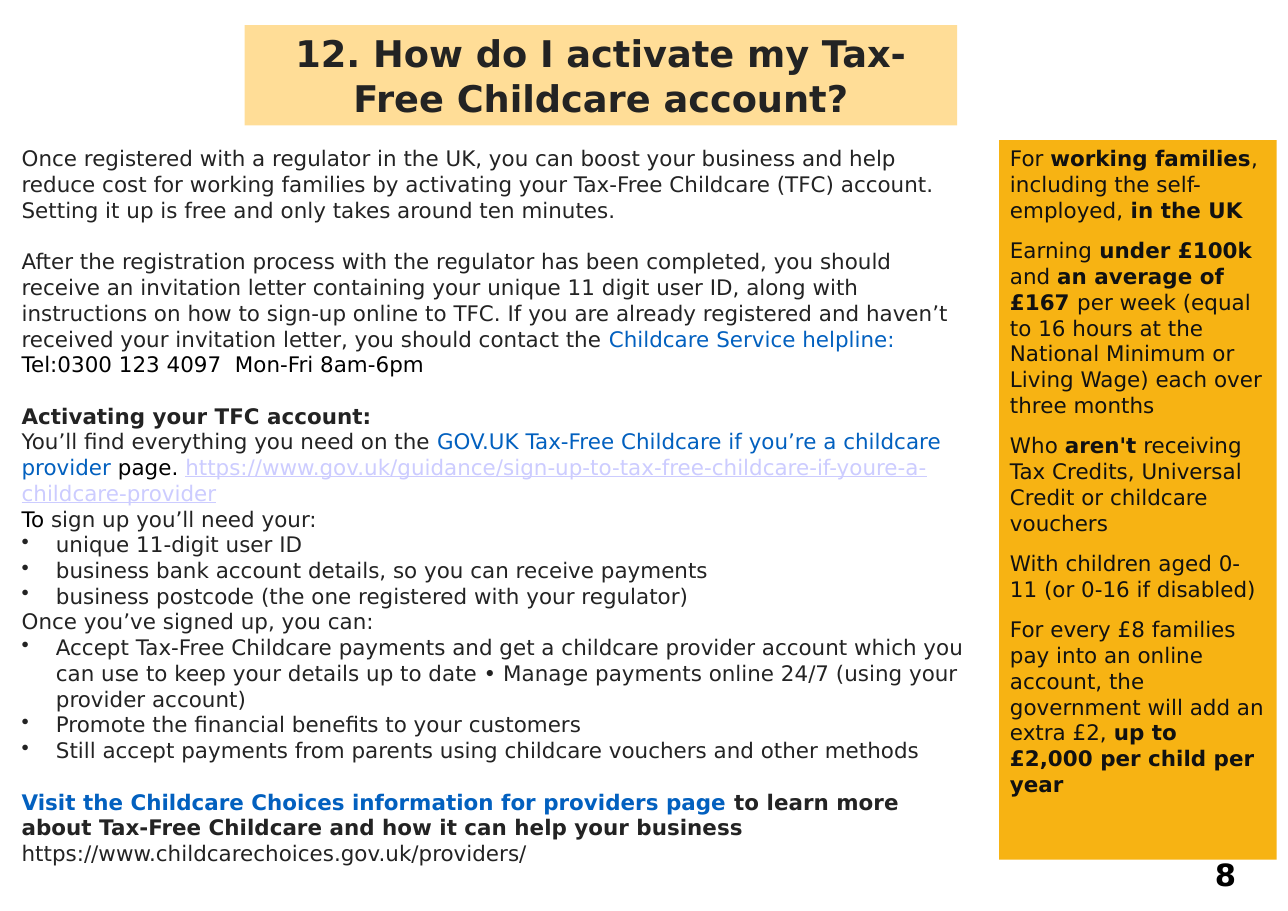
import pptx
import pptx.util
import pptx.dml.color
import pptx.enum.shapes
import pptx.enum.text
import lxml.etree
from pptx.util import Cm

INK = pptx.dml.color.RGBColor(0x23, 0x23, 0x23)
SIDEBAR_INK = pptx.dml.color.RGBColor(0x11, 0x11, 0x11)
BLACK = pptx.dml.color.RGBColor(0x00, 0x00, 0x00)
BLUE = pptx.dml.color.RGBColor(0x02, 0x60, 0xBF)
LILAC = pptx.dml.color.RGBColor(0xCC, 0xCC, 0xFF)
CREAM = pptx.dml.color.RGBColor(0xFF, 0xDD, 0x97)
AMBER = pptx.dml.color.RGBColor(0xF7, 0xB3, 0x13)
FONT = "DejaVu Sans"
INDENT = Cm(0.79)


def style(para, size, color, bold=False):
    para.font.name = FONT
    para.font.size = pptx.util.Pt(size)
    para.font.color.rgb = color
    para.font.bold = bold


def write(frame, paragraphs, color):
    frame.word_wrap = True
    frame.vertical_anchor = pptx.enum.text.MSO_ANCHOR.TOP
    for index, (gap, bulleted, spans) in enumerate(paragraphs):
        para = frame.paragraphs[0] if index == 0 else frame.add_paragraph()
        para.alignment = pptx.enum.text.PP_ALIGN.LEFT
        para.space_before = pptx.util.Pt(gap)
        style(para, 14, color)
        if bulleted:
            properties = para._p.get_or_add_pPr()
            properties.set("marL", str(INDENT))
            properties.set("indent", str(-INDENT))
            bullet = lxml.etree.Element(pptx.oxml.ns.qn("a:buChar"), char="•")
            properties.find(pptx.oxml.ns.qn("a:defRPr")).addprevious(bullet)
        for text, *marks in spans:
            span = para.add_run()
            span.text = text
            for mark in marks:
                if mark == "bold":
                    span.font.bold = True
                elif mark == "underline":
                    span.font.underline = True
                else:
                    span.font.color.rgb = mark


deck = pptx.Presentation()
deck.slide_width = Cm(29.7)
deck.slide_height = Cm(21)
page = deck.slides.add_slide(deck.slide_layouts[5])

title = page.shapes.title
title.left, title.top, title.width, title.height = Cm(5.64), Cm(0.58), Cm(16.43), Cm(2.31)
title.fill.solid()
title.fill.fore_color.rgb = CREAM
title.text_frame.text = "12. How do I activate my Tax-Free Childcare account?"
title.text_frame.auto_size = pptx.enum.text.MSO_AUTO_SIZE.NONE
title.text_frame.paragraphs[0].alignment = pptx.enum.text.PP_ALIGN.CENTER
style(title.text_frame.paragraphs[0], 24, INK, bold=True)

GUIDE_GAP = 16.8
guide = page.shapes.add_textbox(Cm(0.25), Cm(3.23), Cm(22.48), Cm(17.02))
write(guide.text_frame, [
    (0, False, [("Once registered with a regulator in the UK, you can boost your business and help reduce cost for working families by activating your Tax-Free Childcare (TFC) account. Setting it up is free and only takes around ten minutes.",)]),
    (GUIDE_GAP, False, [
        ("After the registration process with the regulator has been completed, you should receive an invitation letter containing your unique 11 digit user ID, along with instructions on how to sign-up online to TFC. If you are already registered and haven’t received your invitation letter, you should contact the ",),
        ("Childcare Service helpline: ", BLUE),
        ("Tel:0300 123 4097  Mon-Fri 8am-6pm", BLACK),
    ]),
    (GUIDE_GAP, False, [("Activating your TFC account:", "bold")]),
    (0, False, [
        ("You’ll find everything you need on the ",),
        ("GOV.UK Tax-Free Childcare if you’re a childcare provider ", BLUE),
        ("page. ", BLACK),
        ("https://www.gov.uk/guidance/sign-up-to-tax-free-childcare-if-youre-a-childcare-provider", LILAC, "underline"),
    ]),
    (0, False, [("To ", BLACK), ("sign up you’ll need your:",)]),
    (0, True, [("unique 11-digit user ID",)]),
    (0, True, [("business bank account details, so you can receive payments",)]),
    (0, True, [("business postcode (the one registered with your regulator)",)]),
    (0, False, [("Once you’ve signed up, you can:",)]),
    (0, True, [("Accept Tax-Free Childcare payments and get a childcare provider account which you can use to keep your details up to date • Manage payments online 24/7 (using your provider account)",)]),
    (0, True, [("Promote the financial benefits to your customers",)]),
    (0, True, [("Still accept payments from parents using childcare vouchers and other methods",)]),
    (GUIDE_GAP, False, [
        ("Visit the Childcare Choices information for providers page ", BLUE, "bold"),
        ("to learn more about Tax-Free Childcare and how it can help your business ", "bold"),
        ("https://www.childcarechoices.gov.uk/providers/",),
    ]),
], INK)

number = page.shapes.add_textbox(Cm(27.46), Cm(19.61), Cm(1.6), Cm(1.12))
number.text_frame.word_wrap = True
number.text_frame.text = "8"
number.text_frame.paragraphs[0].alignment = pptx.enum.text.PP_ALIGN.CENTER
style(number.text_frame.paragraphs[0], 20, BLACK, bold=True)

SIDEBAR_GAP = 9.7
sidebar = page.shapes.add_shape(
    pptx.enum.shapes.MSO_SHAPE.RECTANGLE, Cm(23.04), Cm(3.23), Cm(6.4), Cm(16.59))
sidebar.shadow.inherit = False
sidebar.fill.solid()
sidebar.fill.fore_color.rgb = AMBER
sidebar.line.fill.background()
write(sidebar.text_frame, [
    (0, False, [
        ("For ",), ("working families", "bold"),
        (", including the self-employed,",), (" in the UK", "bold"),
    ]),
    (SIDEBAR_GAP, False, [
        ("Earning",), (" under £100k ", "bold"), ("and ",), ("an average of £167 ", "bold"),
        ("per week (equal to 16 hours at the National Minimum or Living Wage) each over three months",),
    ]),
    (SIDEBAR_GAP, False, [
        ("Who ",), ("aren't", "bold"),
        (" receiving Tax Credits, Universal Credit or childcare vouchers",),
    ]),
    (SIDEBAR_GAP, False, [("With children aged 0-11 (or 0-16 if disabled)",)]),
    (SIDEBAR_GAP, False, [
        ("For every £8 families pay into an online account, the government will add an extra £2, ",),
        ("up to £2,000 per child per year", "bold"),
    ]),
], SIDEBAR_INK)

deck.save("out.pptx")
